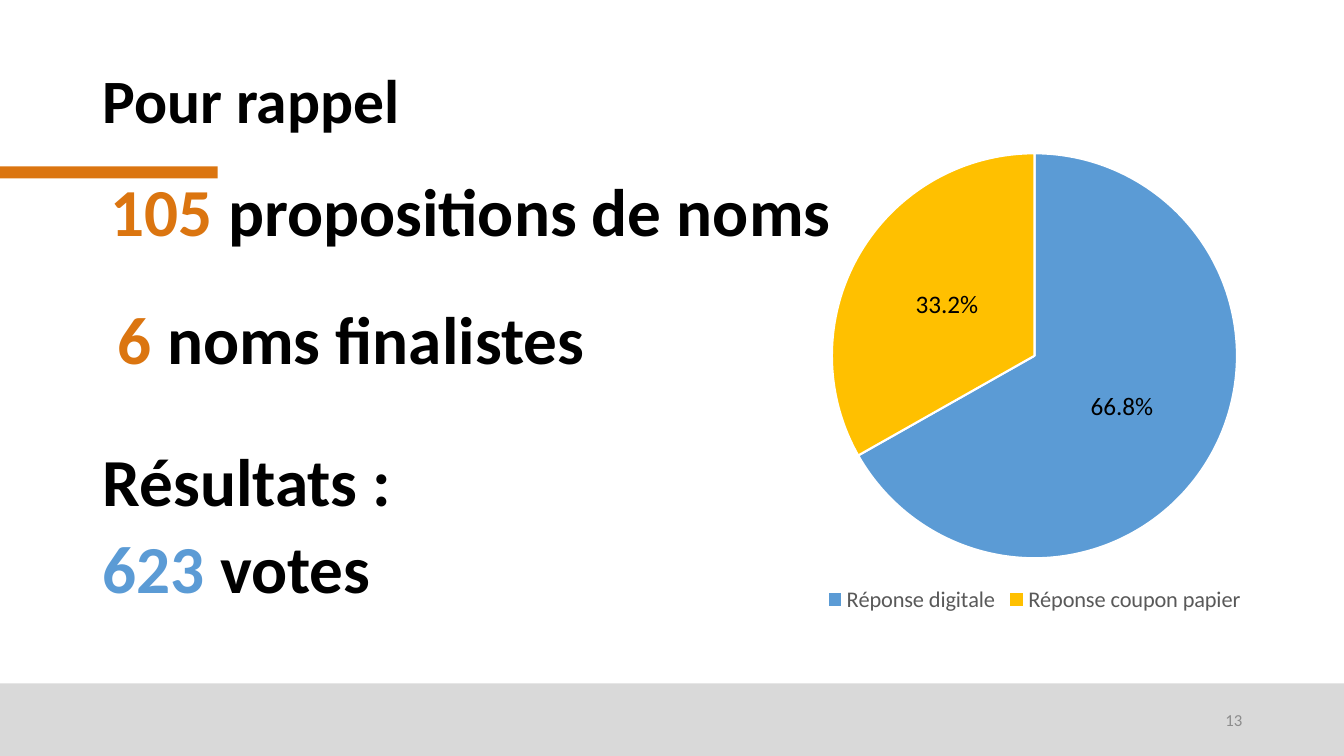
from lxml import etree
from pptx import Presentation
from pptx.chart.data import CategoryChartData
from pptx.dml.color import RGBColor
from pptx.enum.chart import XL_CHART_TYPE, XL_LABEL_POSITION, XL_LEGEND_POSITION
from pptx.enum.shapes import MSO_SHAPE
from pptx.enum.text import MSO_ANCHOR, PP_ALIGN
from pptx.oxml.ns import qn
from pptx.util import Inches, Pt

PIE = XL_CHART_TYPE.PIE
LABEL_CENTER = XL_LABEL_POSITION.CENTER
LEGEND_BOTTOM = XL_LEGEND_POSITION.BOTTOM
RECTANGLE = MSO_SHAPE.RECTANGLE
TOP, MIDDLE = MSO_ANCHOR.TOP, MSO_ANCHOR.MIDDLE
LEFT, RIGHT = PP_ALIGN.LEFT, PP_ALIGN.RIGHT

FONT = "Calibri"
BLACK = RGBColor(0x00, 0x00, 0x00)
WHITE = RGBColor(0xFF, 0xFF, 0xFF)
ORANGE = RGBColor(0xDB, 0x75, 0x10)
BLUE = RGBColor(0x5B, 0x9B, 0xD5)
YELLOW = RGBColor(0xFF, 0xC0, 0x00)
FOOTER_GRAY = RGBColor(0xD9, 0xD9, 0xD9)
NUMBER_GRAY = RGBColor(0x8C, 0x8C, 0x8C)
LEGEND_GRAY = RGBColor(0x59, 0x59, 0x59)

# Each line: left indent in inches, space before in points, (text, colour) runs
KEY_FIGURES = [
    (0.08, 0, [("105", ORANGE), (" propositions de noms", BLACK)]),
    (0.15, 39.5, [("6", ORANGE), (" noms finalistes", BLACK)]),
    (0, 50, [("Résultats :", BLACK)]),
    (0, 10, [("623", BLUE), (" votes", BLACK)]),
]
RESPONSES = [("Réponse digitale", 66.8, BLUE), ("Réponse coupon papier", 33.2, YELLOW)]


def style_font(font, size, color, bold=False):
    font.name = FONT
    font.size = Pt(size)
    font.bold = bold
    font.color.rgb = color


def add_band(slide, left, top, width, height, color):
    band = slide.shapes.add_shape(
        RECTANGLE, Inches(left), Inches(top), Inches(width), Inches(height))
    band.shadow.inherit = False
    band.fill.solid()
    band.fill.fore_color.rgb = color
    band.line.fill.background()


def add_text(slide, left, top, width, height, lines, size, anchor=MIDDLE, align=LEFT, bold=True):
    box = slide.shapes.add_textbox(Inches(left), Inches(top), Inches(width), Inches(height))
    frame = box.text_frame
    frame.word_wrap = True
    frame.vertical_anchor = anchor
    for index, (indent, space_before, runs) in enumerate(lines):
        paragraph = frame.add_paragraph() if index else frame.paragraphs[0]
        paragraph.alignment = align
        paragraph.line_spacing = 0.9
        if space_before:
            paragraph.space_before = Pt(space_before)
        if indent:
            paragraph._p.get_or_add_pPr().set("marL", str(Inches(indent)))
        for text, color in runs:
            run = paragraph.add_run()
            run.text = text
            style_font(run.font, size, color, bold)


def set_plot_area(chart, **fractions):
    """Fix the inner plot area as fractions of the chart frame."""
    plot_area = chart._chartSpace.chart.plotArea
    layout = plot_area.find(qn("c:layout"))
    if layout is None:
        layout = etree.Element(qn("c:layout"))
        plot_area.insert(0, layout)
    manual = etree.SubElement(layout, qn("c:manualLayout"))
    settings = {"layoutTarget": "inner", "xMode": "edge", "yMode": "edge", **fractions}
    for name, value in settings.items():
        etree.SubElement(manual, qn(f"c:{name}")).set("val", str(value))


def add_response_pie(slide, left, top, width, height):
    data = CategoryChartData(number_format='0.0"%"')
    data.categories = [name for name, _, _ in RESPONSES]
    data.add_series("Series 1", [value for _, value, _ in RESPONSES])
    chart = slide.shapes.add_chart(
        PIE, Inches(left), Inches(top), Inches(width), Inches(height), data).chart
    chart.has_title = False
    style_font(chart.font, 10, BLACK)
    set_plot_area(chart, x=0.19, y=0.03, w=0.62, h=0.85)

    # Slices
    plot = chart.plots[0]
    plot.vary_by_categories = True
    for index, (_, _, color) in enumerate(RESPONSES):
        slice_format = plot.series[0].points[index].format
        slice_format.fill.solid()
        slice_format.fill.fore_color.rgb = color
        slice_format.line.color.rgb = WHITE
        slice_format.line.width = Pt(1.5)

    # Value labels
    labels = plot.series[0].data_labels
    labels.show_value = True
    labels.show_percentage = False
    labels.number_format = '0.0"%"'
    labels.number_format_is_linked = False
    labels.position = LABEL_CENTER
    style_font(labels.font, 18, BLACK)

    # Legend
    chart.has_legend = True
    chart.legend.position = LEGEND_BOTTOM
    chart.legend.include_in_layout = False
    style_font(chart.legend.font, 16, LEGEND_GRAY)


def add_footer(slide, left, top, width, height):
    add_band(slide, left, top, width, height, FOOTER_GRAY)
    add_text(slide, left + 9.42, top + 0.17, 3, 0.4, [(0, 0, [("13", NUMBER_GRAY)])],
             12, align=RIGHT, bold=False)


def add_heading(slide, left, top, width, height):
    add_band(slide, 0, top + height, 2.16, 0.12, ORANGE)
    add_text(slide, left, top, width, height, [(0, 0, [("Pour rappel", BLACK)])], 44)


def main():
    presentation = Presentation()
    presentation.slide_width = Inches(13.33)
    presentation.slide_height = Inches(7.5)
    slide = presentation.slides.add_slide(presentation.slide_layouts[6])
    add_footer(slide, 0, 6.78, 13.33, 0.72)
    add_heading(slide, 0.92, 0.4, 11.5, 1.25)
    add_text(slide, 0.92, 1.72, 7.53, 4.7, KEY_FIGURES, 48, anchor=TOP)
    add_response_pie(slide, 7.02, 1.36, 6.48, 4.77)
    presentation.save("out.pptx")


if __name__ == "__main__":
    main()
